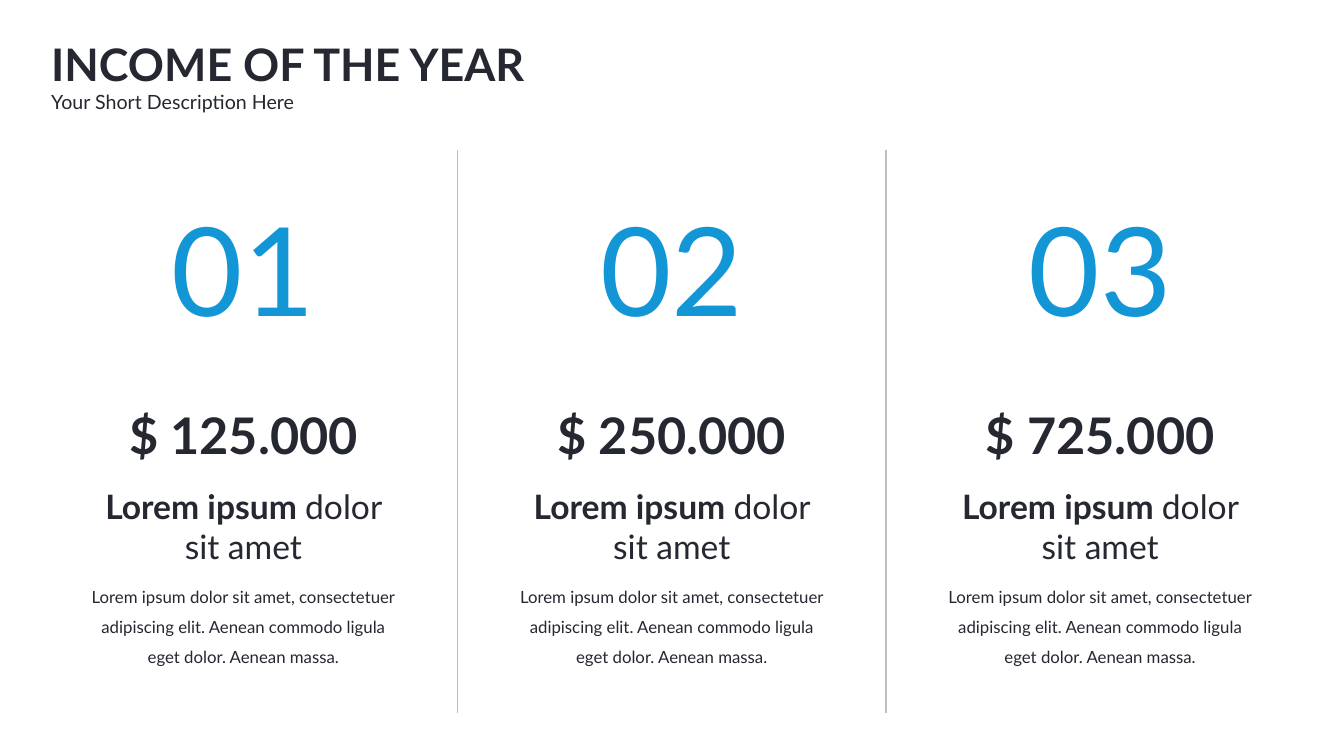
from dataclasses import dataclass

from lxml import etree
from pptx import Presentation
from pptx.dml.color import RGBColor
from pptx.enum.shapes import MSO_CONNECTOR
from pptx.enum.text import MSO_ANCHOR, MSO_AUTO_SIZE, PP_ALIGN
from pptx.oxml.ns import qn
from pptx.slide import Slide
from pptx.text.text import Font
from pptx.util import Pt

STRAIGHT = MSO_CONNECTOR.STRAIGHT
LEFT, CENTER = PP_ALIGN.LEFT, PP_ALIGN.CENTER
TOP, MIDDLE = MSO_ANCHOR.TOP, MSO_ANCHOR.MIDDLE
FIT_SHAPE = MSO_AUTO_SIZE.SHAPE_TO_FIT_TEXT
FIT_NONE = MSO_AUTO_SIZE.NONE

FONT = "Lato"
INK, BLUE, GRAY = "252731", "1296D6", "BFBFBF"

COLUMN_LEFT, COLUMN_WIDTH, COLUMN_STEP = 58.3, 231.1, 306
NUMBER_WIDTH = 117.4
DIVIDER_X, DIVIDER_TOP, DIVIDER_BOTTOM = 326.9, 107.3, 509

BODY = ("Lorem ipsum dolor sit amet, consectetuer adipiscing elit. "
        "Aenean commodo ligula eget dolor. Aenean massa.")


@dataclass(frozen=True)
class Span:
    text: str
    bold: bool = False


@dataclass(frozen=True)
class TextStyle:
    size: float
    color: str = INK
    align: PP_ALIGN = CENTER
    anchor: MSO_ANCHOR = TOP
    line_spacing: float = 1.0
    wrap: bool = True
    fit: MSO_AUTO_SIZE = FIT_SHAPE


@dataclass(frozen=True)
class Income:
    number: str
    amount: str


TITLE = TextStyle(32, align=LEFT, anchor=MIDDLE, fit=FIT_NONE)
SUBTITLE = TextStyle(14, align=LEFT, line_spacing=0.9, fit=FIT_NONE)
NUMBER = TextStyle(88, color=BLUE, wrap=False)
AMOUNT = TextStyle(36)
HEADING = TextStyle(24)
DESCRIPTION = TextStyle(12, line_spacing=1.5)

HEADING_SPANS = [Span("Lorem ipsum ", bold=True), Span("dolor sit amet")]
INCOMES = [
    Income("01", "$ 125.000"),
    Income("02", "$ 250.000"),
    Income("03", "$ 725.000"),
]


def rgb(color: str) -> RGBColor:
    return RGBColor.from_string(color)


def set_font(font: Font, style: TextStyle) -> None:
    font.name = FONT
    font.size = Pt(style.size)
    font.color.rgb = rgb(style.color)


def add_text(page: Slide, left: float, top: float, width: float, height: float,
             spans: list[Span], style: TextStyle) -> None:
    box = page.shapes.add_textbox(Pt(left), Pt(top), Pt(width), Pt(height))
    frame = box.text_frame
    frame.word_wrap = style.wrap
    frame.auto_size = style.fit
    frame.vertical_anchor = style.anchor
    para = frame.paragraphs[0]
    para.alignment = style.align
    para.line_spacing = style.line_spacing
    set_font(para.font, style)
    for span in spans:
        run = para.add_run()
        run.text = span.text
        run.font.bold = span.bold


def add_divider(page: Slide, x: float) -> None:
    line = page.shapes.add_connector(
        STRAIGHT, Pt(x), Pt(DIVIDER_TOP), Pt(x), Pt(DIVIDER_BOTTOM))
    line.line.color.rgb = rgb(GRAY)
    line.line.width = Pt(1)
    properties = line._element.find(qn("p:spPr"))
    etree.SubElement(properties, qn("a:effectLst"))


def add_income(page: Slide, left: float, income: Income) -> None:
    number_left = left + (COLUMN_WIDTH - NUMBER_WIDTH) / 2
    add_text(page, number_left, 134.6, NUMBER_WIDTH, 113.8,
             [Span(income.number)], NUMBER)
    add_text(page, left, 285.1, COLUMN_WIDTH, 51.1,
             [Span(income.amount, bold=True)], AMOUNT)
    add_text(page, left, 343.4, COLUMN_WIDTH, 65.5, HEADING_SPANS, HEADING)
    add_text(page, left, 408.2, COLUMN_WIDTH, 93.6, [Span(BODY)], DESCRIPTION)


def main() -> None:
    deck = Presentation()
    deck.slide_width, deck.slide_height = Pt(960), Pt(540)
    page = deck.slides.add_slide(deck.slide_layouts[6])

    add_text(page, 29.5, 20.2, 450.7, 50.4,
             [Span("INCOME OF THE YEAR", bold=True)], TITLE)
    add_text(page, 29.5, 62.6, 450.7, 23.8,
             [Span("Your Short Description Here")], SUBTITLE)

    for index, income in enumerate(INCOMES):
        offset = index * COLUMN_STEP
        if index < len(INCOMES) - 1:
            add_divider(page, DIVIDER_X + offset)
        add_income(page, COLUMN_LEFT + offset, income)

    deck.save("out.pptx")


if __name__ == "__main__":
    main()
